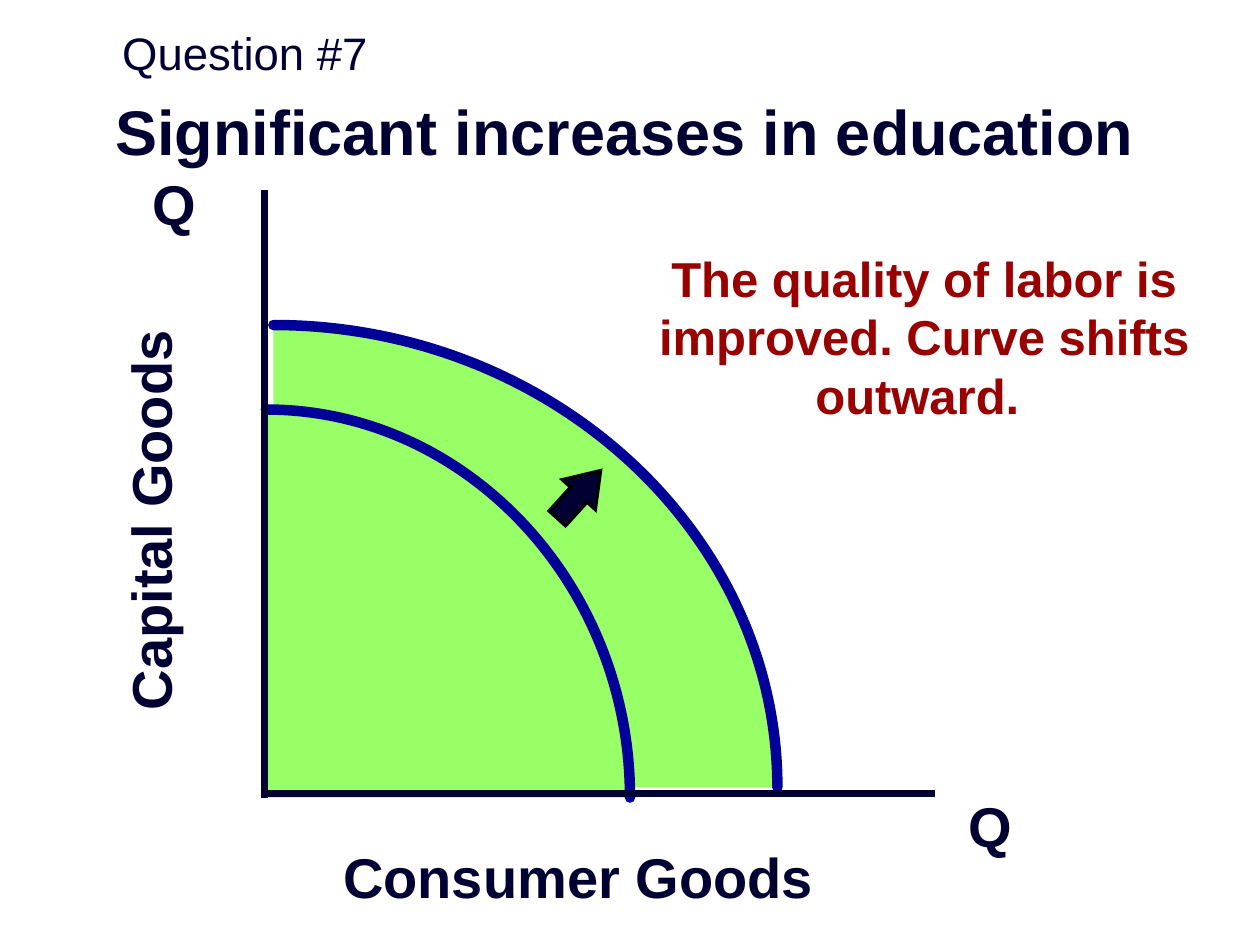
"""Build a slide showing an outward shift of a production possibilities curve."""
from copy import deepcopy

from lxml import etree
from pptx import Presentation
from pptx.dml.color import RGBColor
from pptx.enum.shapes import MSO_CONNECTOR, MSO_SHAPE
from pptx.enum.text import MSO_AUTO_SIZE, PP_ALIGN
from pptx.oxml.ns import qn
from pptx.util import Inches, Pt

STRAIGHT = MSO_CONNECTOR.STRAIGHT
RIGHT_ARROW = MSO_SHAPE.RIGHT_ARROW
GROW = MSO_AUTO_SIZE.SHAPE_TO_FIT_TEXT
LEFT, CENTER = PP_ALIGN.LEFT, PP_ALIGN.CENTER

NAVY = RGBColor(0x00, 0x00, 0x32)
BLUE = RGBColor(0x00, 0x00, 0x99)
GREEN = RGBColor(0x99, 0xFF, 0x66)
RED = RGBColor(0x99, 0x00, 0x00)
BLACK = RGBColor(0x00, 0x00, 0x00)

FONT = "Arial"
ROUNDING = 0.55

CURVES = [(2.17, 2.58, 4, 3.67), (2.11, 3.25, 2.89, 3.08)]
AXES = [(2.1, 1.51, 2.1, 6.33), (2.09, 6.3, 7.42, 6.3)]
SHIFT_ARROW = (4.34, 3.75, 0.51, 0.35)

HEADING = ("Significant increases in education", (0.42, 0.75, 9.08, 1.31), 36, NAVY, True, CENTER)
AXIS_LABELS = [
    ("Q", (1.11, 1.3, 0.54, 0.63), 32, NAVY, True, LEFT),
    ("Q", (7.59, 6.23, 0.54, 0.63), 32, NAVY, True, LEFT),
    ("Consumer Goods", (2.61, 6.64, 3.96, 0.64), 32, NAVY, True, CENTER),
]
VERTICAL_LABEL = ("Capital Goods", (-0.49, 3.81, 3.36, 0.64), 32, NAVY, True, CENTER)
ANSWER = ("The quality of labor is improved. Curve shifts outward. ",
          (4.92, 1.92, 4.83, 1.51), 28, RED, True, CENTER)
QUESTION = ("Question #7", (-1.93, 0.15, 7.75, 0.54), 26, NAVY, False, CENTER)


def inches(values):
    return [Inches(value) for value in values]


def add_label(page, text, frame, size, color, bold, align, wrap=True):
    box = page.shapes.add_textbox(*inches(frame))
    box.text_frame.word_wrap = wrap
    box.text_frame.auto_size = GROW
    para = box.text_frame.paragraphs[0]
    para.text = text
    para.alignment = align
    para.font.name = FONT
    para.font.size = Pt(size)
    para.font.bold = bold
    para.font.color.rgb = color
    return box


def paint(shape, fill, line, width):
    shape.shadow.inherit = False
    shape.fill.solid()
    shape.fill.fore_color.rgb = fill
    shape.line.color.rgb = line
    shape.line.width = Pt(width)


def add_curve(page, left, top, width, height):
    right, bottom = left + width, top + height
    builder = page.shapes.build_freeform(*inches((left, top)))
    builder.add_line_segments([inches((right, bottom)), inches((left, bottom))], close=True)
    curve = builder.convert_to_shape()
    paint(curve, GREEN, BLUE, 6)
    curve.line._get_or_add_ln().set("cap", "rnd")

    area = curve._element.spPr.find(".//" + qn("a:path"))
    bend = etree.Element(qn("a:cubicBezTo"))
    for point in [(width * ROUNDING, 0), (width, height * (1 - ROUNDING)), (width, height)]:
        x, y = inches(point)
        etree.SubElement(bend, qn("a:pt"), x=str(x), y=str(y))
    area.replace(area[1], bend)

    outline = deepcopy(area)
    for part in outline[-2:]:
        outline.remove(part)
    outline.set("fill", "none")
    area.set("stroke", "0")
    area.addprevious(outline)


def add_axes(page):
    group = page.shapes.add_group_shape()
    for ends in AXES:
        axis = group.shapes.add_connector(STRAIGHT, *inches(ends))
        axis.line.color.rgb = NAVY
        axis.line.width = Pt(4)
        etree.SubElement(axis._element.spPr, qn("a:effectLst"))


def add_shift_arrow(page):
    arrow = page.shapes.add_shape(RIGHT_ARROW, *inches(SHIFT_ARROW))
    arrow.adjustments[0] = 0.5
    arrow.adjustments[1] = 0.73
    arrow.rotation = 312.2
    paint(arrow, NAVY, BLACK, 2)
    etree.SubElement(arrow.line._get_or_add_ln(), qn("a:miter"), lim="800000")


def main():
    deck = Presentation()
    deck.slide_width, deck.slide_height = Inches(10), Inches(7.5)
    page = deck.slides.add_slide(deck.slide_layouts[6])
    for curve in CURVES:
        add_curve(page, *curve)
    heading = add_label(page, *HEADING)
    heading.text_frame.paragraphs[0].line_spacing = 0.9
    add_axes(page)
    for label in AXIS_LABELS:
        add_label(page, *label, wrap=False)
    add_label(page, *VERTICAL_LABEL, wrap=False).rotation = 270
    add_shift_arrow(page)
    add_label(page, *ANSWER)
    add_label(page, *QUESTION)
    deck.save("out.pptx")


if __name__ == "__main__":
    main()
